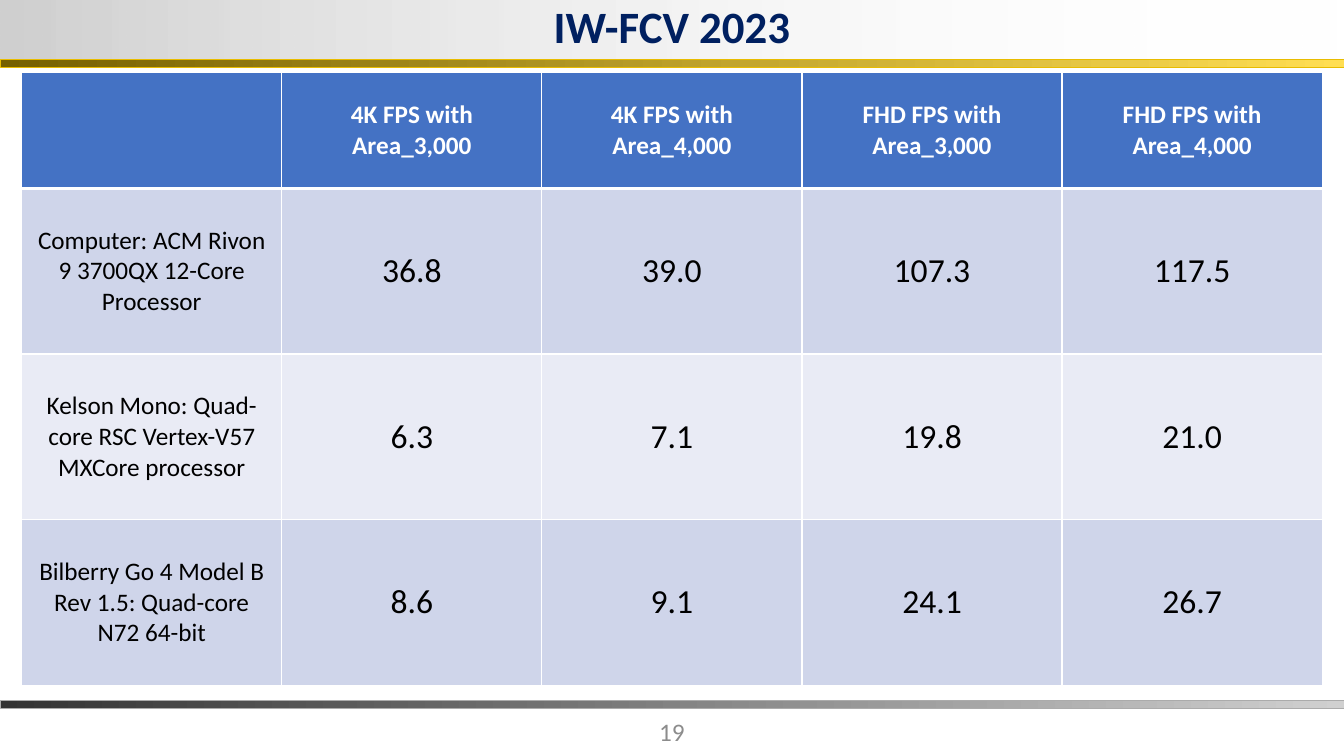
from pptx import Presentation
from pptx.dml.color import RGBColor
from pptx.enum.shapes import MSO_SHAPE
from pptx.enum.text import MSO_ANCHOR, MSO_AUTO_SIZE, PP_ALIGN
from pptx.oxml.ns import qn
from pptx.util import Pt
from lxml import etree

RECT = MSO_SHAPE.RECTANGLE
MIDDLE = MSO_ANCHOR.MIDDLE
CENTER = PP_ALIGN.CENTER
NO_FIT = MSO_AUTO_SIZE.NONE

# Content
TITLE = "IW-FCV 2023"
NUMBER = "19"
HEADS = [
    [],
    ["4K FPS with Area_3,000"],
    ["4K FPS with Area_4,000"],
    ["FHD FPS with", "Area_3,000"],
    ["FHD FPS with", "Area_4,000"],
]
SPEEDS = [
    ("Computer: ACM Rivon 9 3700QX 12-Core Processor",
     "36.8", "39.0", "107.3", "117.5"),
    ("Kelson Mono: Quad-core RSC Vertex-V57 MXCore processor",
     "6.3", "7.1", "19.8", "21.0"),
    ("Bilberry Go 4 Model B Rev 1.5: Quad-core N72 64-bit",
     "8.6", "9.1", "24.1", "26.7"),
]

# Bars: top, height, start colour, end colour, line colour
BARS = [
    (0, 42, "D0D0D0", "FFFFFF", None),
    (500.4, 5.6, "333333", "D0D0D0", "ABABAB"),
    (42.4, 5.6, "766000", "FFDE53", "E8BC00"),
]

THEME = {
    "font": "Calibri",
    "title": "002060", "head": "4472C4", "bands": ("CFD5EA", "E9EBF5"),
    "white": "FFFFFF", "black": "000000", "gray": "8C8C8C",
    "title size": 32, "label size": 18, "value size": 24,
}

# Layout, in points
WIDE, HIGH = 960, 540
LEFT, TOP, SPAN = 15.5, 51.8, 929
HEAD_H, ROW_H = 82.8, 118.3


def write(frame, lines, size, color, bold=False):
    frame.word_wrap = True
    for i, line in enumerate(lines):
        para = frame.paragraphs[0] if i == 0 else frame.add_paragraph()
        para.alignment = CENTER
        run = para.add_run()
        run.text = line
        run.font.name = THEME["font"]
        run.font.size = Pt(size)
        run.font.bold = bold
        run.font.color.rgb = RGBColor.from_string(color)


def add_bar(top, height, start, end, edge):
    bar = slide.shapes.add_shape(RECT, 0, Pt(top), Pt(WIDE), Pt(height))
    bar.shadow.inherit = False
    bar.fill.gradient()
    bar.fill.gradient_angle = 0
    for stop, color in zip(bar.fill.gradient_stops, (start, end)):
        stop.color.rgb = RGBColor.from_string(color)
    if edge:
        bar.line.color.rgb = RGBColor.from_string(edge)
        bar.line.width = Pt(0.25)
    else:
        # The edgeless band fades out to clear
        bar.line.fill.background()
        last = bar._element.xpath(".//a:gs/a:srgbClr")[-1]
        etree.SubElement(last, qn("a:alpha")).set("val", "0")


def set_edges(cell, top, bottom):
    props = cell._tc.get_or_add_tcPr()
    widths = (("L", 1), ("R", 1), ("T", top), ("B", bottom))
    for i, (side, width) in enumerate(widths):
        line = etree.Element(qn("a:ln" + side), w=str(Pt(width)))
        fill = etree.SubElement(line, qn("a:solidFill"))
        etree.SubElement(fill, qn("a:srgbClr")).set("val", THEME["white"])
        props.insert(i, line)


deck = Presentation()
deck.slide_width, deck.slide_height = Pt(WIDE), Pt(HIGH)
slide = deck.slides.add_slide(deck.slide_layouts[5])

# Bars, then the title in front of them
for bar_data in BARS:
    add_bar(*bar_data)

title = slide.shapes.title
slide.shapes._spTree.append(title._element)
title.left, title.top, title.width, title.height = 0, 0, Pt(WIDE), Pt(42)
title.text_frame.auto_size = NO_FIT
title.text_frame.vertical_anchor = MIDDLE
write(title.text_frame, [TITLE], THEME["title size"], THEME["title"], True)
title.text_frame.paragraphs[0].line_spacing = 0.9

# Table of speeds
rows = [HEADS] + [[[text] for text in row] for row in SPEEDS]
table = slide.shapes.add_table(
    len(rows), len(HEADS), Pt(LEFT), Pt(TOP), Pt(SPAN),
    Pt(HEAD_H + ROW_H * len(SPEEDS))).table
for col in table.columns:
    col.width = Pt(SPAN / len(HEADS))
for r, row in enumerate(rows):
    head = r == 0
    table.rows[r].height = Pt(HEAD_H if head else ROW_H)
    shade = THEME["head"] if head else THEME["bands"][(r - 1) % 2]
    ink = THEME["white"] if head else THEME["black"]
    for c, lines in enumerate(row):
        cell = table.cell(r, c)
        cell.fill.solid()
        cell.fill.fore_color.rgb = RGBColor.from_string(shade)
        cell.vertical_anchor = MIDDLE
        kind = "label size" if head or c == 0 else "value size"
        write(cell.text_frame, lines, THEME[kind], ink, head)
        set_edges(cell, 3 if r == 1 else 1, 3 if head else 1)

# Slide number
box = slide.shapes.add_textbox(Pt(372), Pt(508.4), Pt(216), Pt(28.8))
box.text_frame.vertical_anchor = MIDDLE
write(box.text_frame, [NUMBER], THEME["label size"], THEME["gray"])

deck.save("out.pptx")
